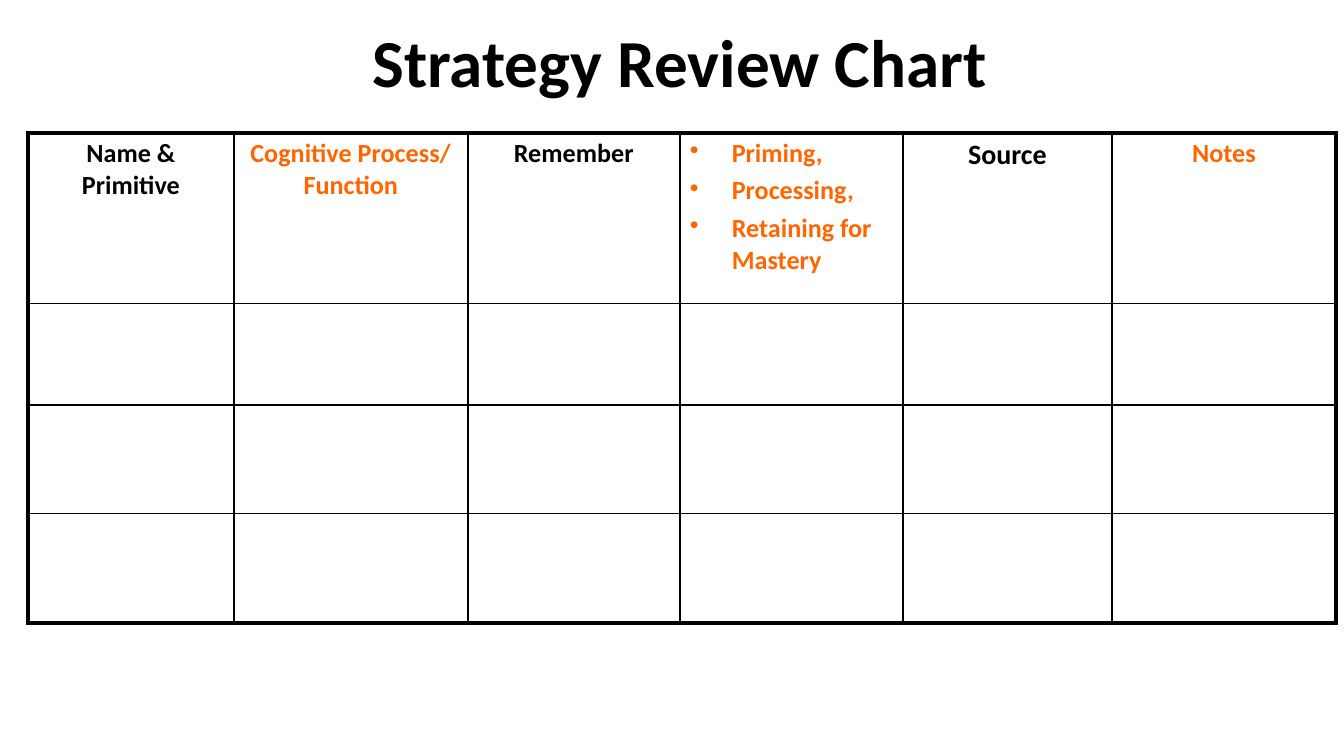
from copy import deepcopy
from dataclasses import dataclass

from lxml import etree
from pptx import Presentation
from pptx import util as u
from pptx.dml.color import RGBColor
from pptx.enum import text
from pptx.oxml.ns import qn


@dataclass(frozen=True)
class Theme:
    font: str = "Calibri"
    black: str = "000000"
    orange: str = "FF6600"
    title_size: float = 36
    head_size: float = 14
    source_size: float = 15
    outer_line: float = 2.25
    inner_line: float = 1


THEME = Theme()


@dataclass(frozen=True)
class Column:
    width: float
    lines: tuple[str, ...]
    color: str
    size: float = THEME.head_size
    bulleted: bool = False


COLUMNS = (
    Column(3.89, ("Name & Primitive",), THEME.black),
    Column(4.42, ("Cognitive Process/\vFunction",), THEME.orange),
    Column(4.01, ("Remember",), THEME.black),
    Column(4.22, ("Priming,", "Processing,", "Retaining for Mastery"),
           THEME.orange, bulleted=True),
    Column(3.94, ("Source",), THEME.black, THEME.source_size),
    Column(4.24, ("Notes",), THEME.orange),
)
ROW_HEIGHTS = (3.23, 1.91, 2.06, 2.06)


def apply(target, values: dict) -> None:
    for name, value in values.items():
        setattr(target, name, value)


def style_spans(para, size: float, color: str) -> None:
    for span in para.runs:
        apply(span.font, {"name": THEME.font, "size": u.Pt(size), "bold": True})
        span.font.color.rgb = RGBColor.from_string(color)
    # A line break takes the format of the text beside it
    for line_break in para._p.findall(qn("a:br")):
        line_break.append(deepcopy(para.runs[0].font._element))


def add_bullet(para) -> None:
    properties = para._p.get_or_add_pPr()
    properties.set("marL", str(u.Cm(0.79)))
    properties.set("indent", str(-u.Cm(0.79)))
    etree.SubElement(properties, qn("a:buChar")).set("char", "•")


def add_title(slide) -> None:
    title = slide.shapes.title
    apply(title, {"left": u.Cm(3.18), "top": u.Cm(1.07),
                  "width": u.Cm(19.05), "height": u.Cm(0.96)})
    frame = title.text_frame
    apply(frame, {"text": " Strategy Review Chart", "word_wrap": True,
                  "auto_size": text.MSO_AUTO_SIZE.NONE,
                  "vertical_anchor": text.MSO_ANCHOR.BOTTOM,
                  "margin_left": u.Cm(0.18), "margin_right": u.Cm(0.18),
                  "margin_top": u.Cm(0.1), "margin_bottom": u.Cm(0.1)})
    para = frame.paragraphs[0]
    apply(para, {"alignment": text.PP_ALIGN.CENTER, "line_spacing": 0.9})
    style_spans(para, THEME.title_size, THEME.black)


def add_borders(cell, outer: dict[str, bool]) -> None:
    properties = cell._tc.get_or_add_tcPr()
    for side, is_outer in outer.items():
        width = THEME.outer_line if is_outer else THEME.inner_line
        line = etree.SubElement(properties, qn(f"a:ln{side}"), w=str(u.Pt(width)))
        fill = etree.SubElement(line, qn("a:solidFill"))
        etree.SubElement(fill, qn("a:srgbClr"), val=THEME.black)


def fill_heading(cell, column: Column) -> None:
    frame = cell.text_frame
    for index, line in enumerate(column.lines):
        para = frame.add_paragraph() if index else frame.paragraphs[0]
        para.text = line
        if column.bulleted:
            add_bullet(para)
        else:
            para.alignment = text.PP_ALIGN.CENTER
        if index:
            para.space_before = u.Pt(3)
        style_spans(para, column.size, column.color)


def add_review_table(slide) -> None:
    last_row, last_column = len(ROW_HEIGHTS) - 1, len(COLUMNS) - 1
    table = slide.shapes.add_table(
        len(ROW_HEIGHTS), len(COLUMNS), u.Cm(0.53), u.Cm(2.51),
        u.Cm(sum(column.width for column in COLUMNS)),
        u.Cm(sum(ROW_HEIGHTS))).table
    apply(table, {"first_row": False, "horz_banding": False})
    for index, column in enumerate(COLUMNS):
        table.columns[index].width = u.Cm(column.width)
    for r, height in enumerate(ROW_HEIGHTS):
        table.rows[r].height = u.Cm(height)
        for c, column in enumerate(COLUMNS):
            cell = table.cell(r, c)
            add_borders(cell, {"L": c == 0, "R": c == last_column,
                               "T": r == 0, "B": r == last_row})
            cell.fill.background()
            apply(cell, {"margin_left": u.Cm(0.19), "margin_right": u.Cm(0.19),
                         "margin_top": u.Cm(0.09), "margin_bottom": u.Cm(0.09)})
            if r == 0:
                fill_heading(cell, column)


def main() -> None:
    deck = Presentation()
    apply(deck, {"slide_width": u.Cm(25.4), "slide_height": u.Cm(14.29)})
    page = deck.slides.add_slide(deck.slide_layouts.get_by_name("Title Only"))
    # Heading
    add_title(page)
    # Empty chart with column headings
    add_review_table(page)
    deck.save("out.pptx")


if __name__ == "__main__":
    main()
